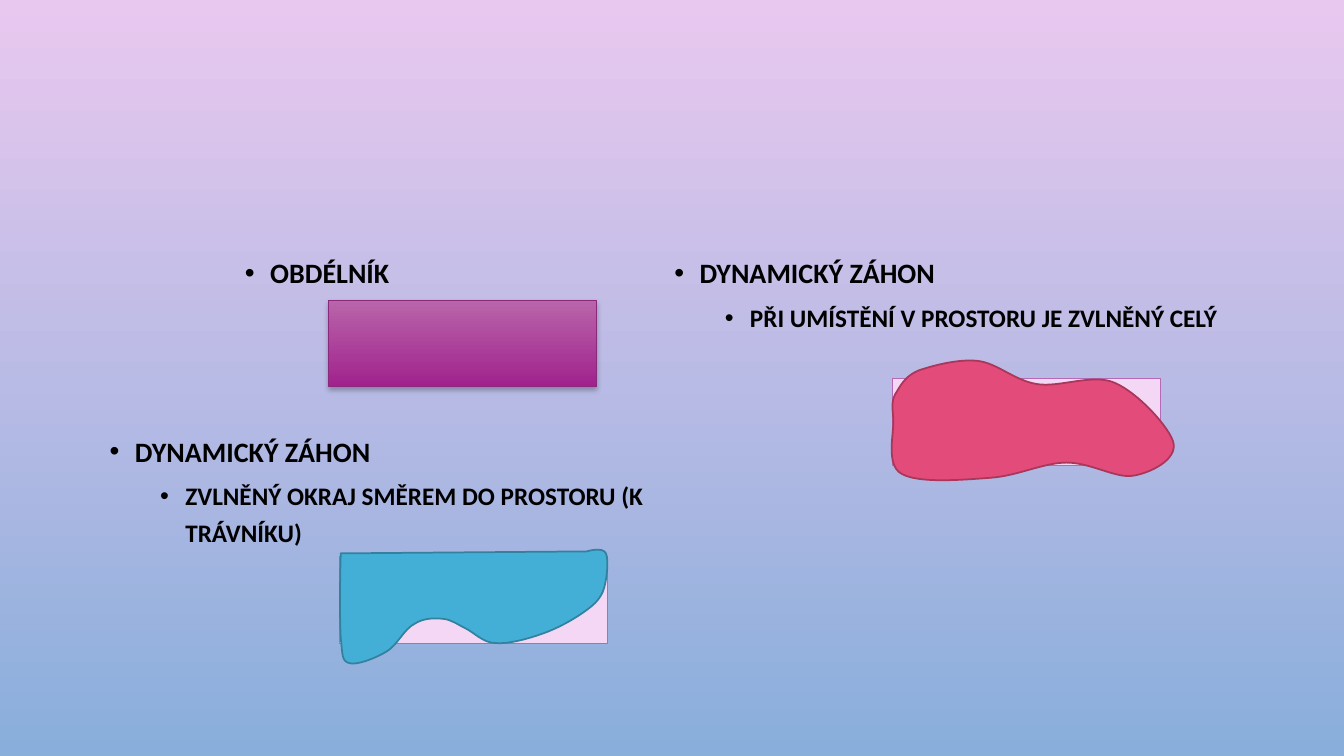
from lxml.etree import Element, SubElement
from pptx import Presentation
from pptx.dml.color import RGBColor
from pptx.enum.shapes import MSO_SHAPE
from pptx.enum.text import MSO_ANCHOR, MSO_AUTO_SIZE, PP_ALIGN
from pptx.oxml.ns import qn
from pptx.util import Inches, Pt

FONT = "Calibri"
BED_SIZE = (2.66, 0.86)

# Bed outlines: a start point, then Bezier curves (x1, y1, x2, y2, x, y)
WAVY_START = (8.88, 3.91)
WAVY_CURVES = [
    (8.93, 3.83, 8.97, 3.74, 9.1, 3.68),
    (9.24, 3.63, 9.5, 3.56, 9.69, 3.58),
    (9.89, 3.6, 10.05, 3.77, 10.28, 3.81),
    (10.51, 3.85, 10.84, 3.7, 11.06, 3.8),
    (11.29, 3.9, 11.61, 4.25, 11.64, 4.4),
    (11.67, 4.56, 11.42, 4.69, 11.24, 4.72),
    (11.07, 4.75, 10.82, 4.59, 10.58, 4.59),
    (10.35, 4.59, 10.1, 4.72, 9.83, 4.74),
    (9.56, 4.76, 9.11, 4.8, 8.94, 4.7),
    (8.78, 4.61, 8.87, 4.29, 8.86, 4.16),
    (8.85, 4.02, 8.84, 3.99, 8.88, 3.91),
]
EDGE_START = (3.38, 5.49)
EDGE_CURVES = [
    (3.37, 5.82, 3.37, 6.15, 3.38, 6.33),
    (3.4, 6.51, 3.39, 6.56, 3.47, 6.58),
    (3.54, 6.6, 3.73, 6.53, 3.84, 6.46),
    (3.94, 6.4, 4.01, 6.24, 4.11, 6.19),
    (4.2, 6.13, 4.31, 6.13, 4.4, 6.14),
    (4.48, 6.15, 4.53, 6.19, 4.61, 6.23),
    (4.7, 6.27, 4.79, 6.38, 4.92, 6.38),
    (5.04, 6.39, 5.23, 6.34, 5.37, 6.29),
    (5.52, 6.24, 5.68, 6.15, 5.78, 6.08),
    (5.88, 6.01, 5.94, 5.96, 5.98, 5.87),
    (6.02, 5.77, 6.04, 5.55, 6.01, 5.49),
    (5.98, 5.42, 5.82, 5.47, 5.82, 5.47),
]


def rgb(color):
    return RGBColor.from_string(color)


def gradient(fill, top, bottom):
    fill.gradient()
    fill.gradient_angle = 270
    for stop, color in zip(fill.gradient_stops, (top, bottom)):
        stop.color.rgb = rgb(color)


def style(sp, fill, line, width):
    sp.shadow.inherit = False
    if isinstance(fill, tuple):
        gradient(sp.fill, *fill)
    else:
        sp.fill.solid()
        sp.fill.fore_color.rgb = rgb(fill)
    sp.line.color.rgb = rgb(line)
    sp.line.width = Pt(width)


def add_bed(s, left, top, fill, line):
    sp = s.shapes.add_shape(MSO_SHAPE.RECTANGLE, Inches(left), Inches(top),
                            *map(Inches, BED_SIZE))
    style(sp, fill, line, 0.75)
    return sp


def add_shadow(sp):
    effects = sp._element.spPr.find(qn("a:effectLst"))
    shadow = SubElement(effects, qn("a:outerShdw"), blurRad=str(Pt(4)),
                        dist=str(Pt(2)), dir="5400000", rotWithShape="0")
    color = SubElement(shadow, qn("a:srgbClr"), val="000000")
    SubElement(color, qn("a:alpha"), val="28000")


def add_curved_bed(s, start, curves, fill, line):
    builder = s.shapes.build_freeform(*map(Inches, start))
    ends = [(Inches(c[4]), Inches(c[5])) for c in curves]
    builder.add_line_segments(ends, close=True)
    sp = builder.convert_to_shape()
    # Bend each straight segment into its Bezier curve
    segments = list(sp._element.iter(qn("a:lnTo")))
    for segment, curve in zip(segments, curves):
        bend = Element(qn("a:cubicBezTo"))
        for x, y in zip(curve[::2], curve[1::2]):
            SubElement(bend, qn("a:pt"), x=str(Inches(x) - sp.left),
                       y=str(Inches(y) - sp.top))
        segment.getparent().replace(segment, bend)
    style(sp, fill, line, 1.25)


def add_bullet(p, text, level):
    pPr = p._p.get_or_add_pPr()
    pPr.set("marL", str(Inches(0.25 + 0.5 * level)))
    pPr.set("indent", str(Inches(-0.25)))
    color = SubElement(pPr, qn("a:buClr"))
    SubElement(color, qn("a:srgbClr"), val="000000")
    SubElement(pPr, qn("a:buFont"), typeface="Arial")
    SubElement(pPr, qn("a:buChar"), char="•")
    p.level = level
    p.alignment = PP_ALIGN.LEFT
    p.line_spacing = 1.2
    p.space_before = Pt(5 if level else 0)
    r = p.add_run()
    r.text = text
    r.font.name = FONT
    r.font.size = Pt(18 if level else 20)
    r.font.bold = True
    r.font.color.rgb = rgb("000000")


def fill_text(sp, lines):
    tf = sp.text_frame
    tf.word_wrap = True
    tf.auto_size = MSO_AUTO_SIZE.NONE
    tf.vertical_anchor = MSO_ANCHOR.TOP
    for level, text in enumerate(lines):
        p = tf.add_paragraph() if level else tf.paragraphs[0]
        add_bullet(p, text, level)


def add_text(s, left, top, width, height, lines):
    sp = s.shapes.add_textbox(*map(Inches, (left, top, width, height)))
    fill_text(sp, lines)


def main():
    prs = Presentation()
    prs.slide_width, prs.slide_height = Inches(13.33), Inches(7.5)
    s = prs.slides.add_slide(prs.slide_layouts[1])
    gradient(s.background.fill, "E9C8EF", "89AEDB")
    title = s.shapes.title._element
    title.getparent().remove(title)

    # Pale rectangles behind the dynamic beds
    for left, top in ((3.37, 5.52), (8.85, 3.76)):
        add_bed(s, left, top, "F4D7F5", "B26BB4")

    # Rectangular bed, its label in front of the pale rectangles
    body = s.placeholders[1]
    body.left, body.top = Inches(2.33), Inches(2.42)
    body.width, body.height = Inches(3.59), Inches(1.49)
    fill_text(body, ["OBDÉLNÍK"])
    body._element.getparent().append(body._element)
    add_shadow(add_bed(s, 3.26, 2.98, ("B965AA", "A0228D"), "8A297B"))

    # Labels of the dynamic beds
    add_text(s, 6.59, 2.42, 5.6, 1.65,
             ["DYNAMICKÝ ZÁHON", "PŘI UMÍSTĚNÍ V PROSTORU JE ZVLNĚNÝ CELÝ"])
    add_text(s, 0.99, 4.19, 5.6, 2.53,
             ["DYNAMICKÝ ZÁHON", "ZVLNĚNÝ OKRAJ SMĚREM DO PROSTORU (K TRÁVNÍKU)"])

    # Dynamic beds: wavy all around, and wavy on the lawn side
    add_curved_bed(s, WAVY_START, WAVY_CURVES, "E34B7A", "A8375A")
    add_curved_bed(s, EDGE_START, EDGE_CURVES, "43AFD6", "32819E")

    prs.save("out.pptx")


if __name__ == "__main__":
    main()
